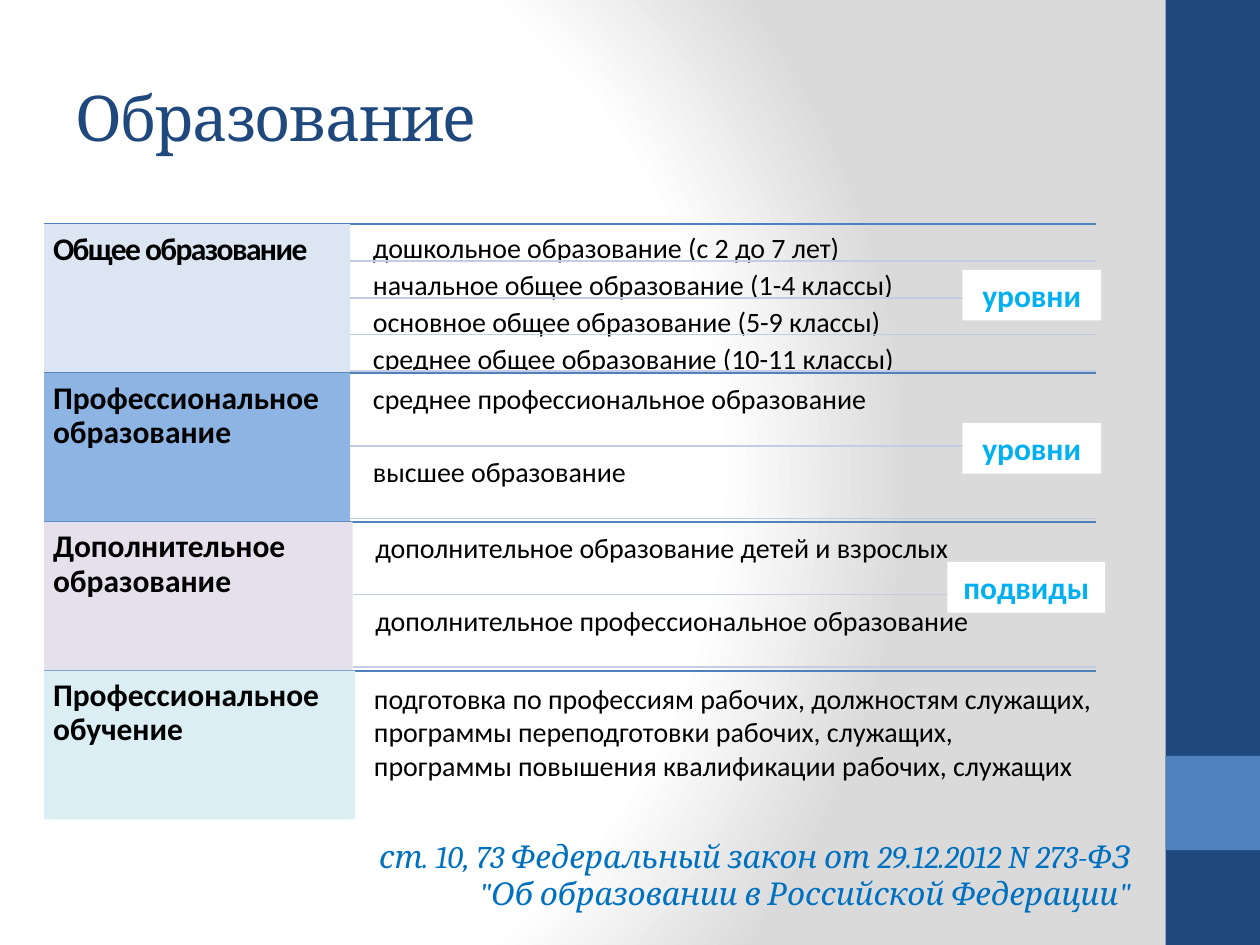
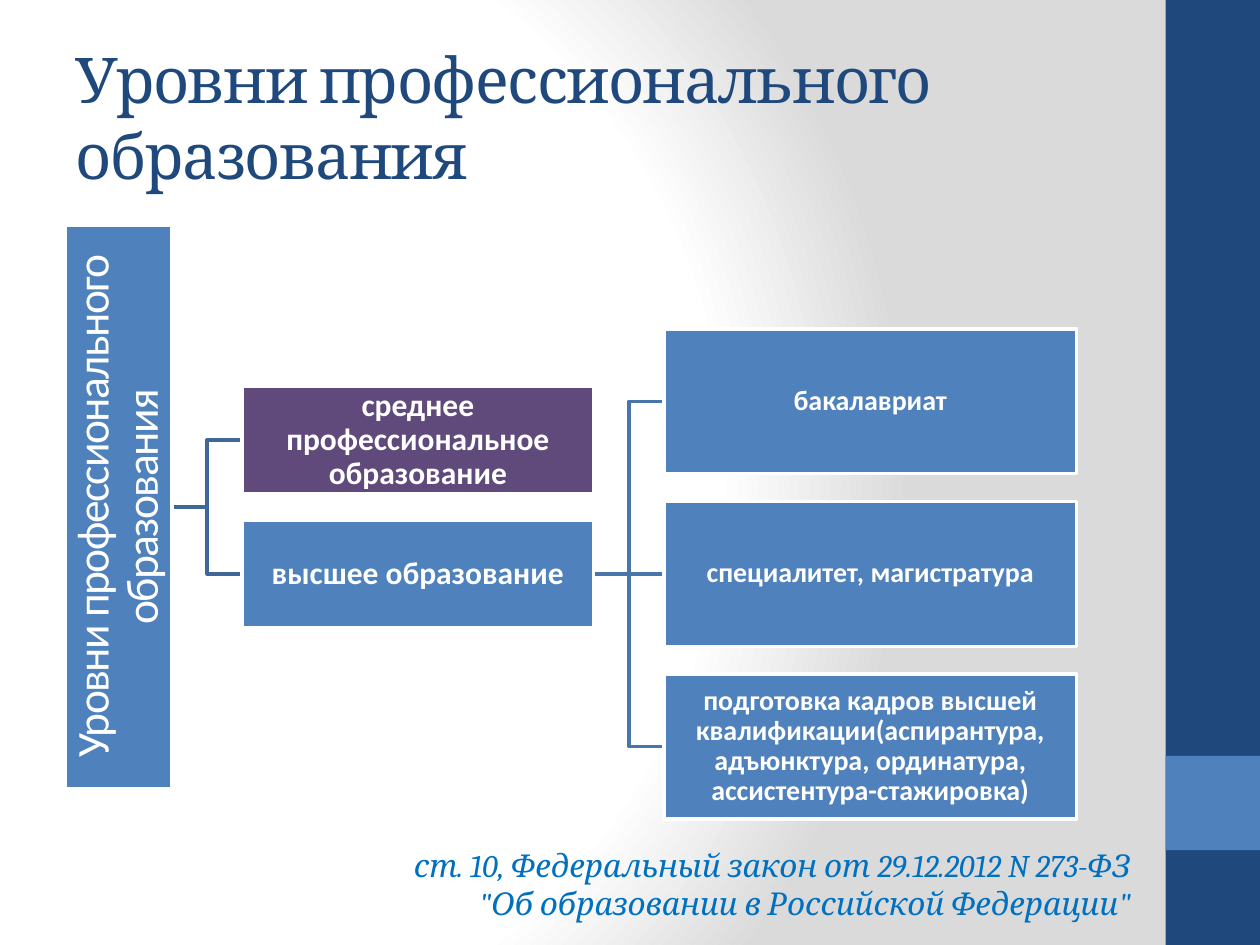
import pptx
import pptx.util
import pptx.dml.color
import pptx.enum.shapes
import pptx.enum.text
import pptx.oxml
import pptx.oxml.ns
from pptx.util import Cm

RGB = pptx.dml.color.RGBColor
ALIGN = pptx.enum.text.PP_ALIGN
ANCHOR = pptx.enum.text.MSO_ANCHOR
RECT = pptx.enum.shapes.MSO_SHAPE.RECTANGLE
STRAIGHT = pptx.enum.shapes.MSO_CONNECTOR.STRAIGHT

NAVY = RGB(0x1F, 0x49, 0x7D)
BLUE = RGB(0x4F, 0x81, 0xBD)
PURPLE = RGB(0x60, 0x4A, 0x7B)
LAW_BLUE = RGB(0x00, 0x70, 0xC0)
TAG_BLUE = RGB(0x00, 0xB0, 0xF0)
RULE_BLUE = RGB(0xC2, 0xCD, 0xE1)
ROOT_LINK = RGB(0x3F, 0x67, 0x97)
LEVEL_LINK = RGB(0x48, 0x75, 0xAC)
WHITE = RGB(0xFF, 0xFF, 0xFF)
BLACK = RGB(0x00, 0x00, 0x00)
ROW_FILLS = [RGB(0xDC, 0xE6, 0xF2), RGB(0x8E, 0xB4, 0xE3),
             RGB(0xE6, 0xE0, 0xEC), RGB(0xDB, 0xEE, 0xF4)]

HEADING_FONT = "Cambria"
BODY_FONT = "Calibri"
TIGHT = -0.9

BACKGROUND = (
    '<a:gradFill %s rotWithShape="1"><a:gsLst>'
    '<a:gs pos="0"><a:srgbClr val="FFFFFF"/></a:gs>'
    '<a:gs pos="75000"><a:srgbClr val="FFFFFF"/></a:gs>'
    '<a:gs pos="100000"><a:srgbClr val="DADADA"/></a:gs></a:gsLst>'
    '<a:path path="circle"><a:fillToRect l="20000" t="50000" r="100000" b="50000"/></a:path>'
    '</a:gradFill>' % pptx.oxml.ns.nsdecls("a"))

LEFT, RIGHT = 0.89, 22.1
ROWS_TOP, ROW_H = 4.52, 3.0
ROWS = [
    ("Общее образование", 6.17, TIGHT,
     ["дошкольное образование (с 2 до 7 лет)",
      "начальное общее образование (1-4 классы)",
      "основное общее образование (5-9 классы)",
      "среднее общее образование (10-11 классы)"]),
    ("Профессиональное образование", 6.17, 0,
     ["среднее профессиональное образование", "высшее образование"]),
    ("Дополнительное образование", 6.22, 0,
     ["дополнительное образование детей и взрослых",
      "дополнительное профессиональное образование"]),
    ("Профессиональное обучение", 6.27, 0, []),
]
TRAINING = ("подготовка по профессиям рабочих, должностям служащих, "
            "программы переподготовки рабочих, служащих, "
            "программы повышения квалификации рабочих, служащих")
TAGS = [("уровни", 19.4, 5.44, 2.8), ("уровни", 19.4, 8.53, 2.8),
        ("подвиды", 19.1, 11.33, 3.18)]
LEVELS = [("среднее профессиональное образование", PURPLE),
          ("высшее образование", BLUE)]
STEPS = [("бакалавриат", BLUE), ("специалитет, магистратура", BLUE),
         ("подготовка кадров высшей квалификации(аспирантура, адъюнктура, "
          "ординатура, ассистентура-стажировка)", BLUE)]


def write(tf, text, size=16, font=BODY_FONT, color=BLACK, bold=False, italic=False,
          align=ALIGN.LEFT, anchor=ANCHOR.TOP, spc=0, line=None, inset=None):
    tf.word_wrap = True
    tf.vertical_anchor = anchor
    if inset is not None:
        tf.margin_left = tf.margin_right = tf.margin_top = tf.margin_bottom = Cm(inset)
    p = tf.paragraphs[0]
    p.text = text
    p.alignment = align
    if line:
        p.line_spacing = line
    for r in p.runs:
        r.font.name = font
        r.font.size = pptx.util.Pt(size)
        r.font.bold = bold
        r.font.italic = italic
        r.font.color.rgb = color
        if spc:
            r.font._element.set("spc", str(round(spc * 100)))


def add_text(s, text, x, y, w, h, **fmt):
    sp = s.shapes.add_textbox(Cm(x), Cm(y), Cm(w), Cm(h))
    write(sp.text_frame, text, **fmt)


def add_box(s, x, y, w, h, fill, border=None, text=None, **fmt):
    sp = s.shapes.add_shape(RECT, Cm(x), Cm(y), Cm(w), Cm(h))
    sp.shadow.inherit = False
    sp.fill.solid()
    sp.fill.fore_color.rgb = fill
    if border is None:
        sp.line.fill.background()
    else:
        sp.line.color.rgb = border
        sp.line.width = pptx.util.Pt(2)
    if text:
        write(sp.text_frame, text, **fmt)
    return sp


def add_line(s, x1, y1, x2, y2, color, width=1):
    cx = s.shapes.add_connector(STRAIGHT, Cm(x1), Cm(y1), Cm(x2), Cm(y2))
    cx.line.color.rgb = color
    cx.line.width = pptx.util.Pt(width)
    effects = pptx.oxml.parse_xml("<a:effectLst %s/>" % pptx.oxml.ns.nsdecls("a"))
    cx._element.spPr.append(effects)


def add_branch(s, x1, y1, x2, y2, color):
    if y1 == y2:
        add_line(s, x1, y1, x2, y2, color, width=2)
        return
    mid = (x1 + x2) / 2
    fb = s.shapes.build_freeform(Cm(x1), Cm(y1))
    fb.add_line_segments([(Cm(mid), Cm(y1)), (Cm(mid), Cm(y2)), (Cm(x2), Cm(y2))],
                         close=False)
    sp = fb.convert_to_shape()
    sp.shadow.inherit = False
    sp.fill.background()
    sp.line.color.rgb = color
    sp.line.width = pptx.util.Pt(2)


def add_nodes(s, nodes, x, centers, w, h, size):
    for (text, fill), cy in zip(nodes, centers):
        add_box(s, x, cy - h / 2, w, h, fill, border=WHITE, text=text, size=size,
                color=WHITE, bold=True, align=ALIGN.CENTER, anchor=ANCHOR.MIDDLE,
                line=0.9, inset=0.03)


def set_background(prs):
    master = prs.slide_master
    master.background.fill.solid()
    bg = master.element.find(".//" + pptx.oxml.ns.qn("p:bgPr"))
    bg.replace(bg[0], pptx.oxml.parse_xml(BACKGROUND))


def add_slide(prs, title, law, law_top):
    s = prs.slides.add_slide(prs.slide_layouts[5])
    add_box(s, 23.5, 0, 1.9, 19.05, NAVY)
    add_box(s, 23.5, 15.24, 1.9, 1.9, BLUE)
    sp = s.shapes.title
    sp.left, sp.top, sp.width, sp.height = Cm(1.27), Cm(0.76), Cm(21.16), Cm(3.18)
    write(sp.text_frame, title, size=36, font=HEADING_FONT, color=NAVY,
          anchor=ANCHOR.MIDDLE, spc=TIGHT)
    add_text(s, law + ' \v"Об образовании в Российской Федерации" ',
             1.7, law_top, 21.49, 1.8, size=18, font=HEADING_FONT,
             color=LAW_BLUE, italic=True, align=ALIGN.RIGHT)
    return s


def add_row(s, y, fill, label, label_w, spc, kinds):
    add_line(s, LEFT, y, RIGHT, y, BLUE)
    add_box(s, LEFT, y, label_w, ROW_H, fill, text=label, size=18, bold=True,
            spc=spc, line=0.9, inset=0.18)
    n = len(kinds)
    h = ROW_H / (n + 0.05 * (n + 1))
    gap = 0.05 * h
    edge = LEFT + label_w
    text_x = edge + 0.28
    for i, kind in enumerate(kinds):
        top = y + gap + i * (h + gap)
        add_text(s, kind, text_x, top, RIGHT - text_x, h, line=0.9, inset=0.18)
        add_line(s, edge, top + h, RIGHT, top + h, RULE_BLUE)


def build_education(prs):
    s = add_slide(prs, "Образование",
                  "ст. 10, 73 Федеральный закон от 29.12.2012 N 273-ФЗ", 16.74)
    for i, (row, fill) in enumerate(zip(ROWS, ROW_FILLS)):
        add_row(s, ROWS_TOP + i * ROW_H, fill, *row)
    for text, x, y, w in TAGS:
        add_box(s, x, y, w, 1.02, WHITE, text=text, size=18, color=TAG_BLUE,
                bold=True, align=ALIGN.CENTER, anchor=ANCHOR.MIDDLE)
    add_text(s, TRAINING, 7.29, 13.61, 14.99, 2.31)


def build_levels(prs):
    s = add_slide(prs, "Уровни профессионального образования",
                  "ст. 10, Федеральный закон от 29.12.2012 N 273-ФЗ", 16.94)
    root_x, root_y, root_len, node_h = 2.39, 10.22, 11.38, 2.16
    level_x, level_w, step_x = 4.88, 7.09, 13.39
    level_ys = [8.87, 11.57]
    step_ys = [level_ys[1] + 3.48 * k for k in (-1, 0, 1)]
    for y in step_ys:
        add_branch(s, level_x + level_w, level_ys[1], step_x, y, LEVEL_LINK)
    for y in level_ys:
        add_branch(s, root_x + node_h / 2, root_y, level_x, y, ROOT_LINK)
    root = add_box(s, root_x - root_len / 2, root_y - node_h / 2, root_len, node_h,
                   BLUE, border=WHITE, text="Уровни профессионального образования",
                   size=26, color=WHITE, align=ALIGN.CENTER, anchor=ANCHOR.MIDDLE,
                   spc=TIGHT, line=0.9, inset=0.05)
    root.rotation = 270
    add_nodes(s, LEVELS, level_x, level_ys, level_w, node_h, 18)
    add_nodes(s, STEPS, step_x, step_ys, 8.31, 2.92, 16)


def main():
    prs = pptx.Presentation()
    prs.slide_width, prs.slide_height = Cm(25.4), Cm(19.05)
    set_background(prs)
    build_education(prs)
    build_levels(prs)
    prs.save("out.pptx")


if __name__ == "__main__":
    main()
